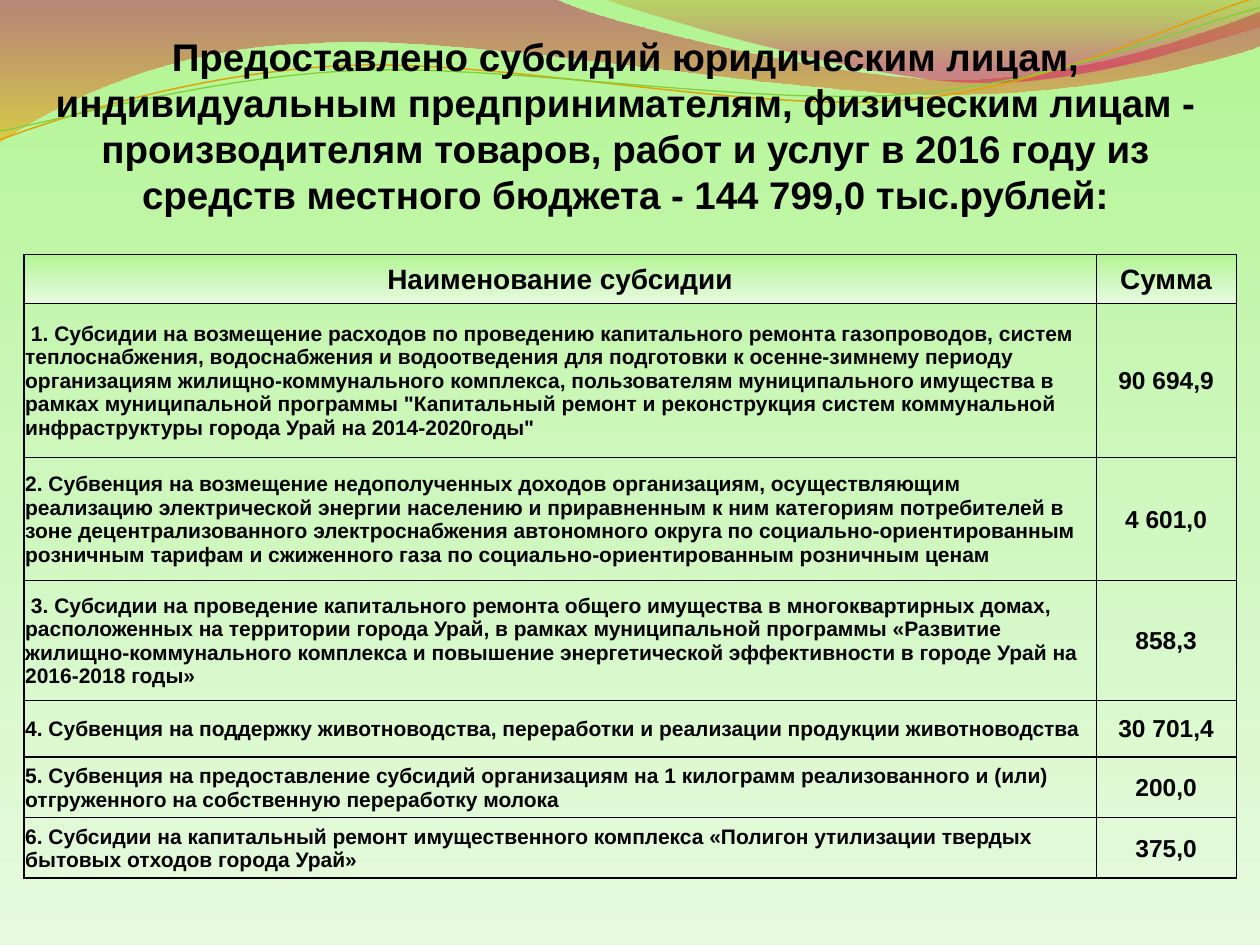
"""Build the slide on subsidies paid from the local budget in 2016."""
import lxml.etree
import pptx
import pptx.dml.color
import pptx.enum.text
import pptx.oxml.ns
import pptx.util

TITLE = ("Предоставлено субсидий юридическим лицам, индивидуальным предпринимателям, "
         "физическим лицам - производителям товаров, работ и услуг в 2016 году "
         "из средств местного бюджета - 144 799,0 тыс.рублей:")
HEADER = ("Наименование субсидии", "Сумма", 0.39)
SUBSIDIES = [
    (" 1. Субсидии на возмещение расходов по проведению капитального ремонта газопроводов, "
     "систем теплоснабжения, водоснабжения и водоотведения для подготовки к осенне-зимнему "
     "периоду организациям жилищно-коммунального комплекса, пользователям муниципального "
     "имущества в рамках муниципальной программы \"Капитальный ремонт и реконструкция систем "
     "коммунальной инфраструктуры города Урай на 2014-2020годы\"", "90 694,9", 1.22),
    ("2. Субвенция на возмещение недополученных доходов организациям, осуществляющим "
     "реализацию электрической энергии населению и приравненным к ним категориям потребителей "
     "в зоне децентрализованного электроснабжения автономного округа по "
     "социально-ориентированным розничным тарифам и сжиженного газа по "
     "социально-ориентированным розничным ценам", "4 601,0", 0.98),
    (" 3. Субсидии на проведение капитального ремонта общего имущества в многоквартирных "
     "домах, расположенных на территории города Урай, в рамках муниципальной программы "
     "«Развитие жилищно-коммунального комплекса и повышение энергетической эффективности "
     "в городе Урай на 2016-2018 годы»", "858,3", 0.95),
    ("4. Субвенция на поддержку животноводства, переработки и реализации продукции "
     "животноводства", "30 701,4", 0.45),
    ("5. Субвенция на предоставление субсидий организациям на 1 килограмм реализованного "
     "и (или) отгруженного на собственную переработку молока", "200,0", 0.48),
    ("6. Субсидии на капитальный ремонт имущественного комплекса «Полигон утилизации "
     "твердых бытовых отходов города Урай»", "375,0", 0.48),
]
COLUMN_WIDTHS = (8.51, 1.11)
GREEN_FADE = [(0, "B2F592", 100), (50, "CEF7BD", 100), (100, "E7FADF", 100)]

WAVES = [
    {"start": (0, 0), "fade": [(0, "BD0059", 45), (100, "F0AB00", 55)], "segments": [
        [(4.4, -0.01)],
        [(4.76, 0.17), (6.64, 0.63), (7.58, 0.63)],
        [(8.53, 0.63), (9.58, 0.26), (10, 0.09)],
        [(10.01, 0.36)],
        [(9.83, 0.44), (8.7, 0.76), (7.46, 0.75)],
        [(6.22, 0.75), (3.82, 0.28), (2.57, 0.34)],
        [(1.29, 0.36), (0.46, 0.83), (-0.01, 1.13)]]},
    {"start": (4.79, -0.01), "fade": [(0, "C38B00", 30), (80, "E1006B", 45)], "segments": [
        [(5.09, 0.11), (6.82, 0.62), (7.69, 0.65)],
        [(8.56, 0.69), (9.61, 0.32), (10, 0.21)],
        [(10, 0)]]},
    {"start": (0, 1.11), "line": ("E0A209", 0.85), "segments": [
        [(0.48, 0.93), (1.58, 0.57), (2.77, 0.52)],
        [(3.95, 0.47), (5.93, 0.89), (7.13, 0.8)],
        [(8.33, 0.71), (9.38, 0.15), (9.98, -0.02)]]},
    {"start": (0, 1.04), "line": ("7FD13B", 0.75), "segments": [
        [(0.47, 0.96), (1.64, 0.61), (2.83, 0.56)],
        [(4.03, 0.51), (5.97, 0.84), (7.17, 0.75)],
        [(8.36, 0.67), (9.41, 0.21), (10, 0.06)]]},
]
UNITS_PER_INCH = 1000


def rgb(hex_code):
    return pptx.dml.color.RGBColor.from_string(hex_code)


def child(parent, tag, **attributes):
    node = lxml.etree.SubElement(parent, pptx.oxml.ns.qn(tag))
    for key, value in attributes.items():
        node.set(key, str(value))
    return node


def fade_down(fill, stops):
    fill.gradient()
    gradient = fill._fill._gradFill
    for node in list(gradient):
        gradient.remove(node)
    stop_list = child(gradient, "a:gsLst")
    for position, hex_code, opacity in stops:
        stop = child(stop_list, "a:gs", pos=position * 1000)
        colour = child(stop, "a:srgbClr", val=hex_code)
        if opacity < 100:
            child(colour, "a:alpha", val=opacity * 1000)
    child(gradient, "a:lin", ang=90 * 60000, scaled=0)


def write(frame, text, size, centred=True):
    paragraph = frame.paragraphs[0]
    paragraph.alignment = (pptx.enum.text.PP_ALIGN.CENTER if centred
                           else pptx.enum.text.PP_ALIGN.LEFT)
    run = paragraph.add_run()
    run.text = text
    run.font.name, run.font.size, run.font.bold = "Arial", pptx.util.Pt(size), True
    run.font.color.rgb = rgb("000000")


def in_units(point):
    return tuple(round(value * UNITS_PER_INCH) for value in point)


def bend(shape, anchors, segments):
    left, top = (min(values) for values in zip(*anchors))
    for straight, segment in zip(shape._element.xpath(".//a:lnTo"), segments):
        if len(segment) == 3:
            curve = lxml.etree.Element(pptx.oxml.ns.qn("a:cubicBezTo"))
            for x, y in map(in_units, segment):
                child(curve, "a:pt", x=x - left, y=y - top)
            straight.getparent().replace(straight, curve)


def add_wave(slide, wave):
    segments = wave["segments"]
    anchors = [in_units(p) for p in (wave["start"], *(segment[-1] for segment in segments))]
    builder = slide.shapes.build_freeform(
        *anchors[0], scale=pptx.util.Inches(1) / UNITS_PER_INCH)
    builder.add_line_segments(anchors[1:], close="fade" in wave)
    shape = builder.convert_to_shape()
    bend(shape, anchors, segments)
    shape.shadow.inherit = False
    if "fade" in wave:
        fade_down(shape.fill, wave["fade"])
        shape.line.fill.background()
    else:
        hex_code, width = wave["line"]
        shape.fill.background()
        shape.line.color.rgb = rgb(hex_code)
        shape.line.width = pptx.util.Pt(width)


def add_borders(cell, widths):
    properties = cell._tc.get_or_add_tcPr()
    for index, (side, width) in enumerate(widths.items()):
        edge = lxml.etree.Element(pptx.oxml.ns.qn(f"a:ln{side}"), w=str(int(width * 12700)))
        child(child(edge, "a:solidFill"), "a:srgbClr", val="000000")
        properties.insert(index, edge)


def add_subsidy_table(slide):
    rows = [HEADER, *SUBSIDIES]
    heights = [row[-1] for row in rows]
    area = map(pptx.util.Inches, (0.19, 2.02, sum(COLUMN_WIDTHS), sum(heights)))
    table = slide.shapes.add_table(len(rows), len(COLUMN_WIDTHS), *area).table
    table.horz_banding = table.first_row = False
    for column, width in zip(table.columns, COLUMN_WIDTHS):
        column.width = pptx.util.Inches(width)
    for r, (name, amount, height) in enumerate(rows):
        table.rows[r].height = pptx.util.Inches(height)
        for c, text in enumerate((name, amount)):
            cell = table.cell(r, c)
            cell.vertical_anchor = pptx.enum.text.MSO_ANCHOR.MIDDLE
            cell.margin_left = cell.margin_right = cell.margin_top = pptx.util.Inches(0.01)
            cell.margin_bottom = 0
            write(cell.text_frame, text, 16 if r == 0 else (12, 14)[c],
                  centred=r == 0 or c == 1)
            if r == 0:
                fade_down(cell.fill, GREEN_FADE)
            else:
                cell.fill.background()
            add_borders(cell, {"L": 1 if c == 0 else 0.5, "R": 0.5,
                               "T": 1 if r in (0, 5, 6) else 0.5,
                               "B": 1 if r >= 4 else 0.5})


def main():
    deck = pptx.Presentation()
    deck.slide_width, deck.slide_height = pptx.util.Inches(10), pptx.util.Inches(7.5)
    slide = deck.slides.add_slide(deck.slide_layouts[6])
    fade_down(slide.background.fill, GREEN_FADE)
    for wave in WAVES:
        add_wave(slide, wave)
    title = slide.shapes.add_textbox(*map(pptx.util.Inches, (0.12, 0.21, 9.69, 3.03)))
    title.text_frame.word_wrap = True
    write(title.text_frame, TITLE, 22)
    add_subsidy_table(slide)
    deck.save("out.pptx")


if __name__ == "__main__":
    main()
